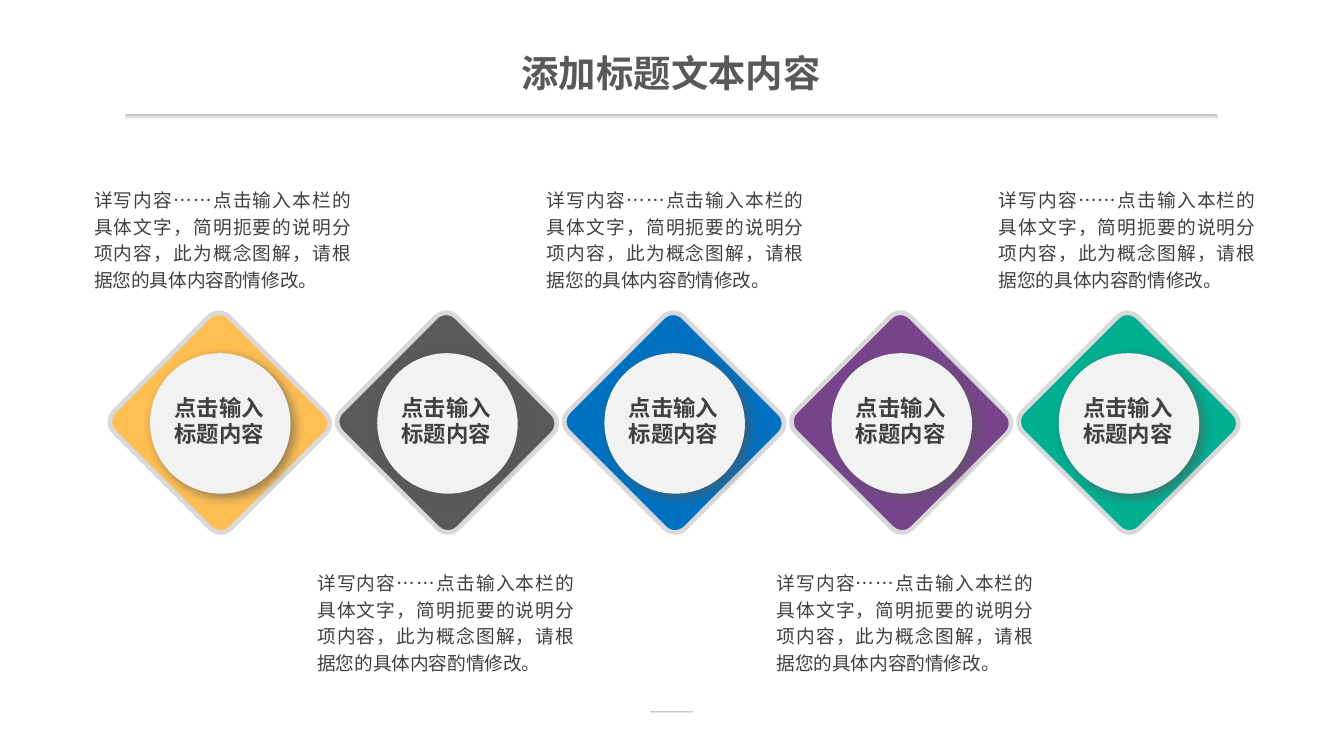
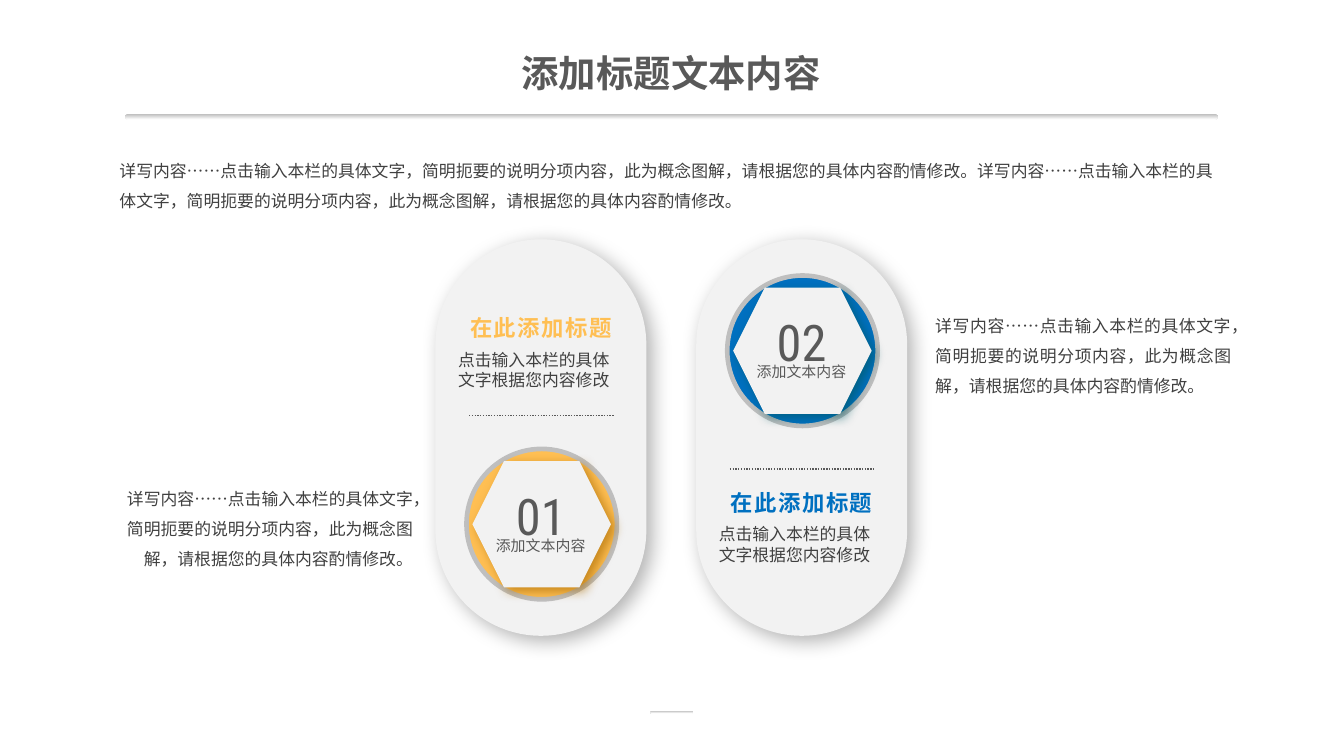
"""Build two diagram slides: a row of five diamonds and a pair of capsule cards."""
import lxml.etree
import pptx
import pptx.dml.color
import pptx.enum.dml
import pptx.enum.lang
import pptx.enum.shapes
import pptx.enum.text
import pptx.oxml.ns
import pptx.util

Pt = pptx.util.Pt
SHAPE = pptx.enum.shapes.MSO_SHAPE
ALIGN = pptx.enum.text.PP_ALIGN
ANCHOR = pptx.enum.text.MSO_ANCHOR

TITLE = "添加标题文本内容"
DETAIL = "详写内容……点击输入本栏的具体文字，简明扼要的说明分项内容，此为概念图解，请根据您的具体内容酌情修改。"


def color(value):
    return pptx.dml.color.RGBColor.from_string(value)


def add_xml(parent, tag, **attributes):
    return lxml.etree.SubElement(parent, pptx.oxml.ns.qn(tag), attributes)


class Show:
    CJK = "Noto Sans CJK SC"
    INK, GRAY, PALE, RULE = "404040", "595959", "F2F2F2", "BFBFBF"
    WIDE, NARROW, FLUSH = (7.2, 3.6), (5.04, 2.88), (0, 0)

    def __init__(self):
        self.deck = pptx.Presentation()
        self.deck.slide_width, self.deck.slide_height = Pt(720), Pt(405)
        self.layout = self.deck.slide_layouts[5]
        self.page = None

    def start_page(self, title):
        self.page = self.deck.slides.add_slide(self.layout)
        if len(self.deck.slides) == 1:
            self.furnish_layout()
        box = self.page.shapes.title
        box.left, box.top, box.width, box.height = map(Pt, (221, 23.8, 277.2, 29.5))
        self.fill_text(box, title, {"size": Pt(20), "bold": True, "name": "Arial"}, self.GRAY,
                       {"alignment": ALIGN.CENTER}, self.NARROW)

    def furnish_layout(self):
        for place in ((67, 61.2, 585.4, 2.9), (348.5, 380.9, 23, 1.4)):
            band = self.shape(SHAPE.ROUNDED_RECTANGLE, place, self.RULE, adjust=0.5)
            band.fill.gradient()
            band.fill.gradient_angle = 270
            for stop, shade in zip(band.fill.gradient_stops, (self.RULE, "FFFFFF")):
                stop.color.rgb = color(shade)
            self.layout.shapes.element.append(band.element)

    def shape(self, kind, place, fill, line=None, adjust=None, turn=0, shadow=None):
        item = self.page.shapes.add_shape(kind, *map(Pt, place))
        item.shadow.inherit = False
        item.rotation = turn
        item.fill.solid()
        item.fill.fore_color.rgb = color(fill)
        if line:
            item.line.color.rgb = color(line)
            item.line.width = Pt(2.5)
        else:
            item.line.fill.background()
        if adjust is not None:
            item.adjustments[0] = adjust
        if shadow:
            self.cast_shadow(item, *shadow)
        return item

    def cast_shadow(self, item, shade, opacity, blur, distance):
        effects = item.element.spPr.find(pptx.oxml.ns.qn("a:effectLst"))
        outer = add_xml(effects, "a:outerShdw", blurRad=str(Pt(blur)), dist=str(Pt(distance)),
                        dir="2700000", algn="tl", rotWithShape="0")
        tint = add_xml(outer, "a:srgbClr", val=shade)
        add_xml(tint, "a:alpha", val=str(opacity * 1000))

    def text(self, place, words, size, ink=INK, layout=None, inset=WIDE,
             anchor=ANCHOR.TOP, name=CJK, bold=False, tracking=None):
        box = self.page.shapes.add_textbox(*map(Pt, place))
        font = {"size": Pt(size), "bold": bold, "name": name}
        self.fill_text(box, words, font, ink, layout or {}, inset, anchor, tracking)

    def fill_text(self, box, words, font, ink, layout, inset, anchor=ANCHOR.TOP, tracking=None):
        frame = box.text_frame
        side, edge = map(Pt, inset)
        settings = {"word_wrap": True, "auto_size": pptx.enum.text.MSO_AUTO_SIZE.NONE,
                    "vertical_anchor": anchor, "margin_left": side, "margin_right": side,
                    "margin_top": edge, "margin_bottom": edge}
        para = frame.paragraphs[0]
        span = para.add_run()
        span.text = words
        font = {**font, "language_id": pptx.enum.lang.MSO_LANGUAGE_ID.SIMPLIFIED_CHINESE}
        for target, values in ((frame, settings), (para, layout), (span.font, font)):
            for key, value in values.items():
                setattr(target, key, value)
        span.font.color.rgb = color(ink)
        properties = span._r.get_or_add_rPr()
        add_xml(properties, "a:ea", typeface=self.CJK)
        if tracking:
            properties.set("spc", str(tracking))

    def dotted_line(self, left, top, width):
        line = self.page.shapes.add_connector(
            pptx.enum.shapes.MSO_CONNECTOR.STRAIGHT, Pt(left), Pt(top), Pt(left + width), Pt(top))
        line.line.color.rgb = color(self.GRAY)
        line.line.width = Pt(0.75)
        line.line.dash_style = pptx.enum.dml.MSO_LINE.ROUND_DOT
        add_xml(line.element.spPr, "a:effectLst")

    def diamond(self, left, fill):
        self.shape(SHAPE.ROUNDED_RECTANGLE, (left, 182.9, 88.5, 87.1), fill, "D9D9D9", 0.09, 45)
        self.shape(SHAPE.OVAL, (left + 6.7, 189.4, 75.6, 74.9), self.PALE, turn=45,
                   shadow=(self.GRAY, 64, 6, 3))
        self.text((left + 8.3, 217.4, 71.3, 15.8), "点击输入标题内容", 12,
                  layout={"alignment": ALIGN.CENTER}, anchor=ANCHOR.MIDDLE, bold=True)

    def card(self, left, number, fill, shade, medal_top, heading_top, line_top):
        centered = {"alignment": ALIGN.CENTER}
        self.shape(SHAPE.ROUNDED_RECTANGLE, (left, 128.2, 113, 212.4), self.PALE, adjust=0.5,
                   shadow=("000000", 29, 11, 4))
        self.shape(SHAPE.OVAL, (left + 16.6, medal_top, 80.6, 80.6), fill, self.RULE)
        self.shape(SHAPE.HEXAGON, (left + 19.8, medal_top + 6.5, 74.2, 67.7), self.PALE,
                   shadow=(shade, 64, 6, 3))
        self.text((left + 19, medal_top + 15.8, 74.9, 40.3), number, 27, self.GRAY, centered,
                  name="Roboto Condensed")
        self.text((left + 19, medal_top + 43.2, 74.9, 26.6), "添加文本内容", 8, self.GRAY,
                  centered, name="DejaVu Sans")
        self.text((left + 0.7, heading_top, 111.6, 21.6), "在此添加标题", 12, fill, centered,
                  name="Arial", bold=True, tracking=80)
        self.text((left + 5, heading_top + 18.7, 103.7, 28.8), "点击输入本栏的具体文字根据您内容修改", 9)
        self.dotted_line(left + 18, line_top, 77.8)


def main():
    show = Show()
    show.start_page(TITLE)
    for index, fill in enumerate(("FFBF53", "595959", "0070C0", "77448C", "00AF92")):
        show.diamond(73.5 + 121.7 * index, fill)
    for index, left in enumerate((50.4, 170, 293, 416, 535)):
        top = 303.8 if index % 2 else 98.6
        show.text((left, top, 137.5, 58.3), DETAIL, 10, inset=show.FLUSH,
                  layout={"alignment": ALIGN.JUSTIFY, "line_spacing": 1.2})

    show.start_page(TITLE)
    show.card(233.3, "01", "FFBF53", "A96A00", 240.5, 164.9, 222.5)
    show.card(373, "02", "0070C0", "005962", 147.6, 258.5, 251.3)
    for place, words, alignment in (
            ((59, 77.8, 600.5, 38.2), DETAIL * 2, ALIGN.LEFT),
            ((496, 160.6, 168.5, 54.7), DETAIL, ALIGN.JUSTIFY),
            ((57.6, 253.4, 168.5, 54.7), DETAIL, ALIGN.RIGHT)):
        show.text(place, words, 9, inset=show.NARROW,
                  layout={"alignment": alignment, "line_spacing": 1.5})
    show.deck.save("out.pptx")


if __name__ == "__main__":
    main()
